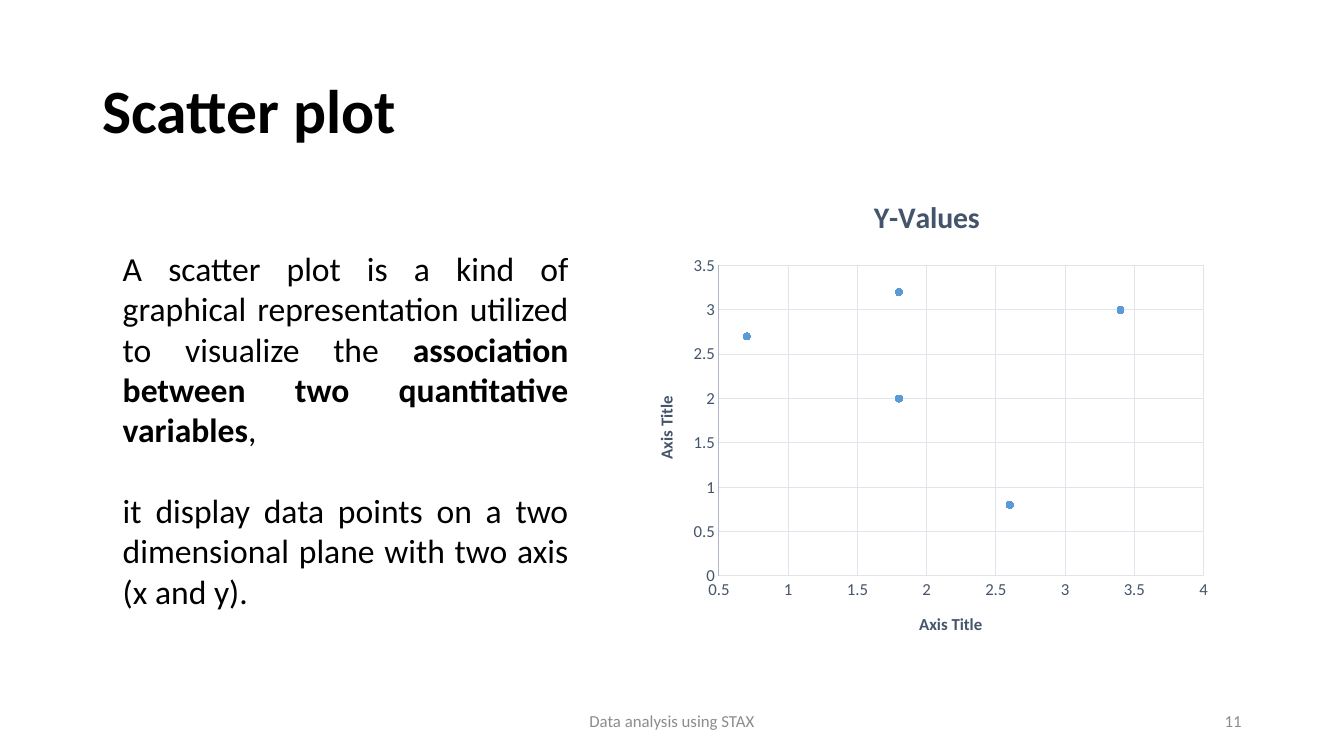
from pptx import Presentation
from pptx import util as u
from pptx.chart.data import XyChartData
from pptx.dml.color import RGBColor
from pptx.enum import chart as ch, text

TITLE = "Scatter plot"
DEFINITION = [
    [("A scatter plot is a kind of graphical representation utilized to visualize the ", False),
     ("association between two quantitative variables", True),
     (", ", False)],
    [("it display data points on a two dimensional plane with two axis (x and y).", False)],
]
FOOTER = "Data analysis using STAX"
PAGE_NUMBER = "11"
SERIES = "Y-Values"
POINTS = [(0.7, 2.7), (1.8, 3.2), (2.6, 0.8), (3.4, 3), (1.8, 2)]
AXIS_TITLE = "Axis Title"

FONT = "Calibri"
BLACK, GREY, SLATE = "000000", "8C8C8C", "44546A"
GRID, AXIS_LINE, MARKER = "E0E5EB", "ADB9CA", "5B9BD5"


def color(value):
    return RGBColor.from_string(value)


def style(font, size, fill, bold=False):
    font.name, font.size, font.bold = FONT, u.Pt(size), bold
    font.color.rgb = color(fill)


def write(frame, paragraphs, size=24, fill=BLACK, bold=False, align=None,
          anchor=text.MSO_ANCHOR.TOP, gap=0, spacing=None):
    """Fill a text frame; each paragraph is a string or a list of (text, bold)."""
    frame.word_wrap = True
    frame.vertical_anchor = anchor
    for index, spans in enumerate(paragraphs):
        para = frame.paragraphs[0] if index == 0 else frame.add_paragraph()
        para.alignment, para.line_spacing = align, spacing
        if index:
            para.space_before = u.Pt(gap)
        if isinstance(spans, str):
            spans = [(spans, bold)]
        for words, heavy in spans:
            span = para.add_run()
            span.text = words
            style(span.font, size, fill, heavy)


def add_text(left, top, width, height, paragraphs, **look):
    box = slide.shapes.add_textbox(*map(u.Pt, (left, top, width, height)))
    write(box.text_frame, paragraphs, **look)


def format_axis(axis, low, high, line):
    axis.minimum_scale, axis.maximum_scale, axis.major_unit = low, high, 0.5
    axis.major_tick_mark = axis.minor_tick_mark = ch.XL_TICK_MARK.NONE
    axis.has_major_gridlines = True
    for edge, shade in ((axis.format.line, line),
                        (axis.major_gridlines.format.line, GRID)):
        edge.width = u.Pt(0.75)
        edge.color.rgb = color(shade)
    style(axis.tick_labels.font, 12, SLATE)
    write(axis.axis_title.text_frame, [AXIS_TITLE], size=12, fill=SLATE, bold=True)


deck = Presentation()
deck.slide_width, deck.slide_height = u.Pt(960), u.Pt(540)
slide = deck.slides.add_slide(deck.slide_layouts[5])

title = slide.shapes.title
title.left, title.top, title.width, title.height = map(u.Pt, (66, 28.8, 828, 104.4))
write(title.text_frame, [TITLE], size=44, bold=True, align=text.PP_ALIGN.LEFT,
      anchor=text.MSO_ANCHOR.MIDDLE, spacing=0.9)

add_text(80.6, 173.5, 332.6, 269.3, DEFINITION, align=text.PP_ALIGN.JUSTIFY, gap=29)
for left, width, words, align in (
        (318, 324, FOOTER, text.PP_ALIGN.CENTER),
        (678, 216, PAGE_NUMBER, text.PP_ALIGN.RIGHT)):
    add_text(left, 500.5, width, 28.8, [words], size=12, fill=GREY, align=align,
             anchor=text.MSO_ANCHOR.MIDDLE)

data = XyChartData()
points = data.add_series(SERIES)
for x, y in POINTS:
    points.add_data_point(x, y)
chart = slide.shapes.add_chart(ch.XL_CHART_TYPE.XY_SCATTER,
                               *map(u.Pt, (452.9, 126, 418.3, 342.7)), data).chart
style(chart.font, 10, BLACK)
chart.has_legend = False
chart.has_title = True
chart.chart_title.include_in_layout = False
write(chart.chart_title.text_frame, [SERIES], size=21.3, fill=SLATE, bold=True)
chart.plots[0].vary_by_categories = False

format_axis(chart.category_axis, 0.5, 4, GRID)
format_axis(chart.value_axis, 0, 3.5, AXIS_LINE)
chart.category_axis.crosses = ch.XL_AXIS_CROSSES.MINIMUM
chart.value_axis.axis_title.text_frame._txBody.bodyPr.set("rot", "-5400000")

series = chart.plots[0].series[0]
series.format.line.fill.background()
marker = series.marker
marker.style, marker.size = ch.XL_MARKER_STYLE.CIRCLE, 5
marker.format.fill.solid()
marker.format.fill.fore_color.rgb = color(MARKER)
marker.format.line.color.rgb = color(MARKER)

deck.save("out.pptx")
